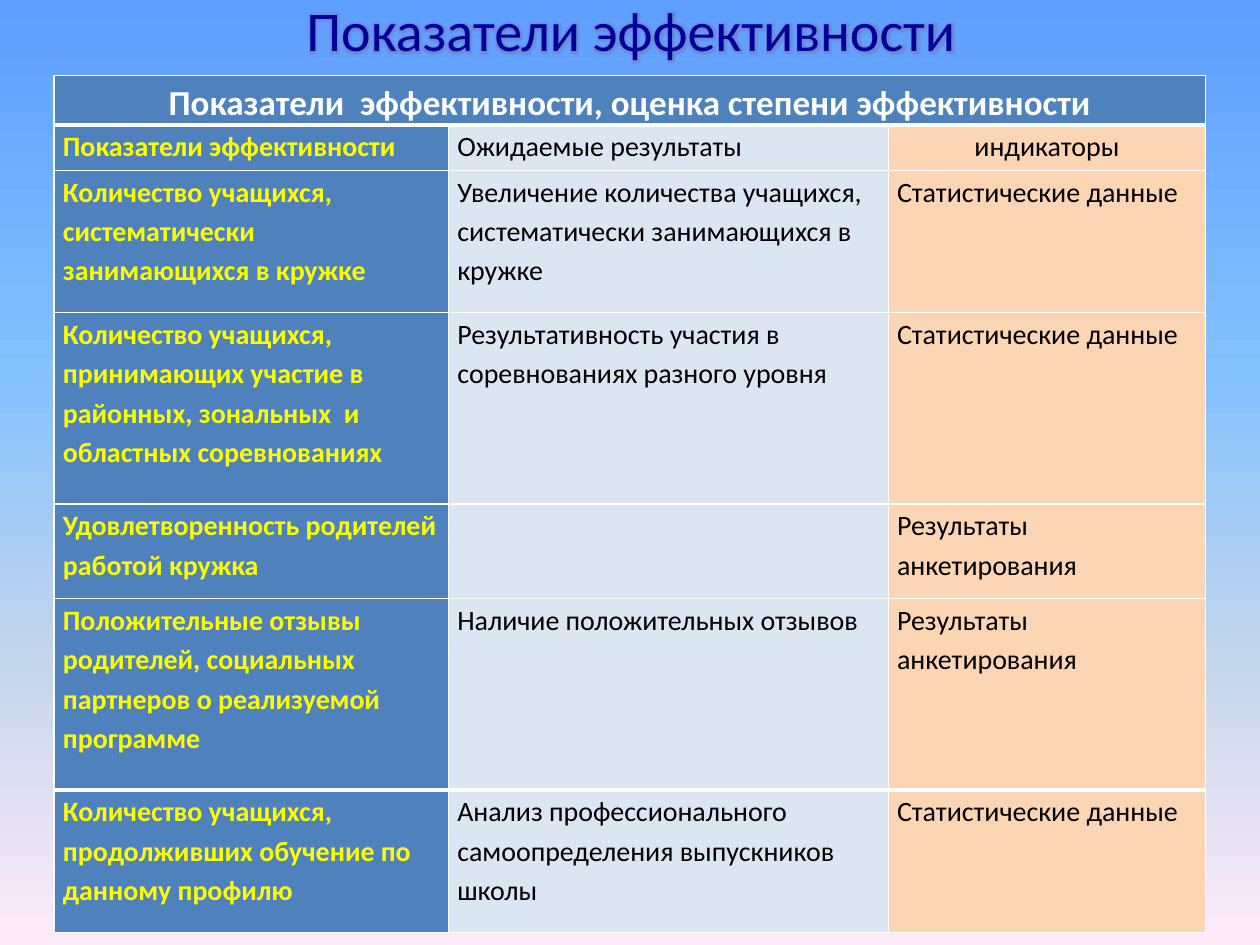
from lxml import etree
from pptx import Presentation
from pptx.dml.color import RGBColor
from pptx.enum.text import MSO_ANCHOR, PP_ALIGN
from pptx.oxml import parse_xml
from pptx.oxml.ns import nsdecls, qn
from pptx.util import Inches, Pt

LEFT, CENTER = PP_ALIGN.LEFT, PP_ALIGN.CENTER
MIDDLE = MSO_ANCHOR.MIDDLE
FONT = "Calibri"

NAVY = RGBColor(0x00, 0x00, 0x99)
BLUE = RGBColor(0x4F, 0x81, 0xBD)
PALE = RGBColor(0xDC, 0xE6, 0xF2)
PEACH = RGBColor(0xFC, 0xD5, 0xB5)
WHITE = RGBColor(0xFF, 0xFF, 0xFF)
BLACK = RGBColor(0x00, 0x00, 0x00)
YELLOW = RGBColor(0xFF, 0xFF, 0x00)
GLOW = RGBColor(0x80, 0x64, 0xA2)

# Sky gradient: percent and colour
SKY = [(0, "5E9EFF"), (40, "85C2FF"), (70, "C4D6EB"), (100, "FFEBFA")]

TITLE = "Показатели эффективности"
HEAD = "Показатели  эффективности, оценка степени эффективности"
STATS = "Статистические данные"
POLL = "Результаты анкетирования"
ROWS = [
    ("Показатели эффективности", "Ожидаемые результаты", "индикаторы"),
    ("Количество учащихся, систематически занимающихся в кружке",
     "Увеличение количества учащихся, систематически занимающихся в кружке",
     STATS),
    ("Количество учащихся, принимающих участие в районных, зональных  и "
     "областных соревнованиях",
     "Результативность участия в соревнованиях разного уровня", STATS),
    ("Удовлетворенность родителей работой кружка", "", POLL),
    ("Положительные отзывы родителей, социальных партнеров о реализуемой "
     "программе", "Наличие положительных отзывов", POLL),
    ("Количество учащихся, продолживших обучение по данному профилю",
     "Анализ профессионального самоопределения выпускников школы", STATS),
]
WIDTHS = [3.13, 3.49, 2.52]
HEIGHTS = [0.36, 0.36, 1.13, 1.52, 0.75, 1.52, 1.13]
# Fill, text colour and bold of each column
STYLES = [(BLUE, YELLOW, True), (PALE, BLACK, False), (PEACH, BLACK, False)]


def paint_sky(slide):
    fill = slide.background.fill
    fill.gradient()
    fill.gradient_angle = 270
    stops = slide.background._cSld.find(".//" + qn("a:gsLst"))
    for stop in list(stops):
        stops.remove(stop)
    for pct, color in SKY:
        stop = etree.SubElement(stops, qn("a:gs"), pos=str(pct * 1000))
        etree.SubElement(stop, qn("a:srgbClr"), val=color)


def style_text(para, size, color, bold, align):
    para.alignment = align
    for run in para.runs:
        font = run.font
        font.name, font.size, font.bold = FONT, Pt(size), bold
        font.color.rgb = color


def add_title(slide):
    title = slide.shapes.title
    title.left, title.top = Inches(0.51), Inches(0)
    title.width, title.height = Inches(9), Inches(0.46)
    frame = title.text_frame
    frame.text = TITLE
    frame.vertical_anchor = MIDDLE
    para = frame.paragraphs[0]
    style_text(para, 32, NAVY, False, CENTER)
    # Soft glow round the letters
    glow = parse_xml(
        f'<a:effectLst {nsdecls("a")}><a:glow rad="{Pt(5)}">'
        f'<a:srgbClr val="{GLOW}"><a:alpha val="40000"/></a:srgbClr>'
        "</a:glow></a:effectLst>")
    para.runs[0].font._element.find(qn("a:solidFill")).addnext(glow)


def set_edges(cell, top, bottom):
    props = cell._tc.get_or_add_tcPr()
    edges = [("L", 1), ("R", 1), ("T", top), ("B", bottom)]
    for pos, (side, width) in enumerate(edges):
        props.insert(pos, parse_xml(
            f'<a:ln{side} {nsdecls("a")} w="{Pt(width)}"><a:solidFill>'
            f'<a:srgbClr val="{WHITE}"/></a:solidFill></a:ln{side}>'))


def fill_cell(cell, text, fill, size, color, bold, align):
    cell.fill.solid()
    cell.fill.fore_color.rgb = fill
    cell.margin_left = cell.margin_right = Inches(0.07)
    cell.margin_top = cell.margin_bottom = 0
    cell.text_frame.text = text
    para = cell.text_frame.paragraphs[0]
    para.line_spacing = 1.15
    style_text(para, size, color, bold, align)


def add_grid(slide):
    last = len(ROWS)
    table = slide.shapes.add_table(
        last + 1, len(WIDTHS), Inches(0.43), Inches(0.6),
        Inches(sum(WIDTHS)), Inches(sum(HEIGHTS))).table
    for col, width in zip(table.columns, WIDTHS):
        col.width = Inches(width)
    for row, height in zip(table.rows, HEIGHTS):
        row.height = Inches(height)

    # Heading across all columns
    table.cell(0, 0).merge(table.cell(0, 2))
    fill_cell(table.cell(0, 0), HEAD, BLUE, 20, WHITE, True, CENTER)
    for cell in table.rows[0].cells:
        set_edges(cell, 1, 3)

    # Body, with thick rules under the heading and above the last row
    for r, texts in enumerate(ROWS, 1):
        for c, (text, (fill, color, bold)) in enumerate(zip(texts, STYLES)):
            cell = table.cell(r, c)
            align = CENTER if (r, c) == (1, 2) else LEFT
            fill_cell(cell, text, fill, 16, color, bold, align)
            set_edges(cell, 3 if r in (1, last) else 1,
                      3 if r == last - 1 else 1)


def main():
    deck = Presentation()
    deck.slide_width, deck.slide_height = Inches(10), Inches(7.5)
    slide = deck.slides.add_slide(deck.slide_layouts[5])
    paint_sky(slide)
    add_title(slide)
    add_grid(slide)
    deck.save("out.pptx")


if __name__ == "__main__":
    main()
